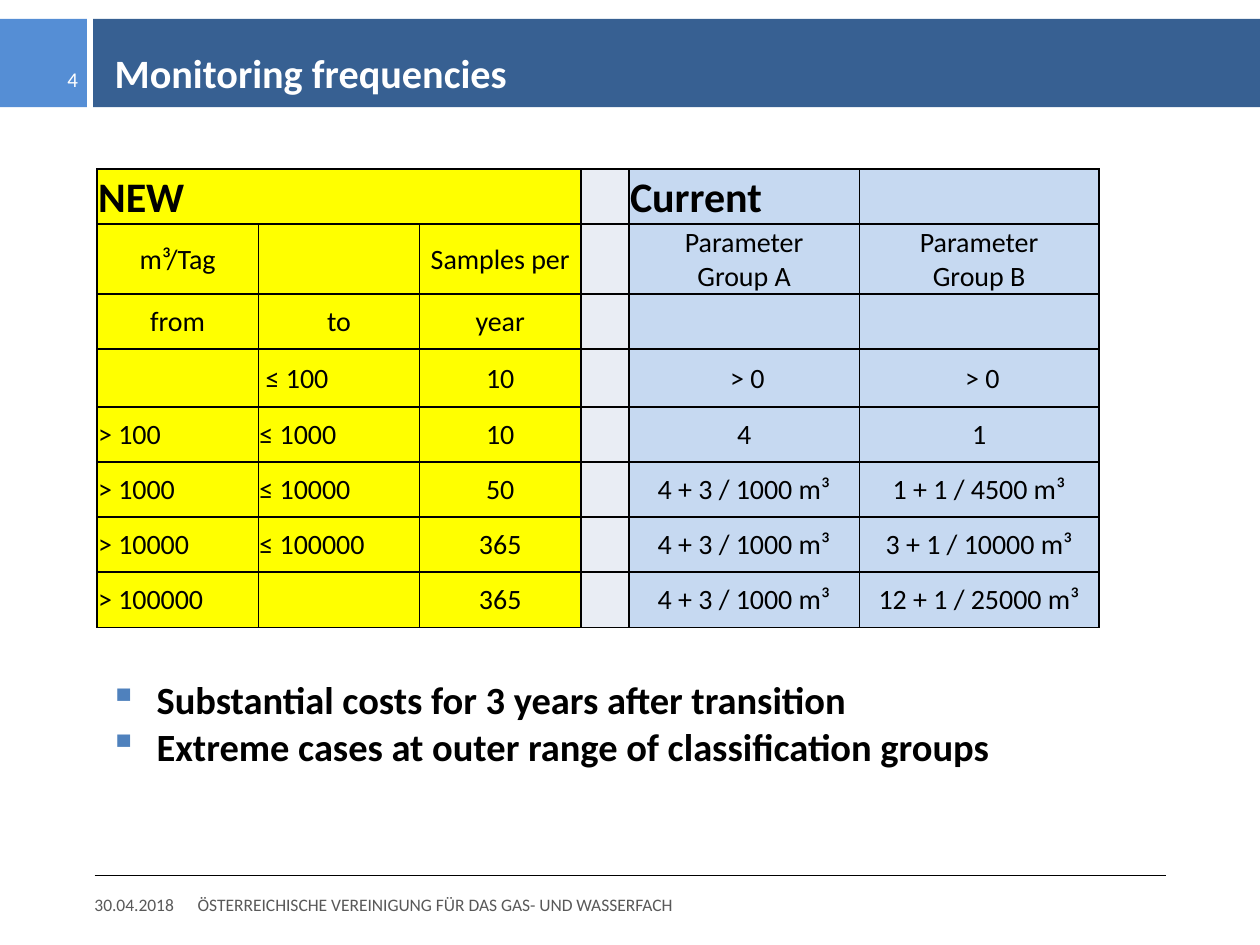
from lxml.etree import SubElement
from pptx import Presentation
from pptx.dml.color import RGBColor
from pptx.enum.shapes import MSO_CONNECTOR, MSO_SHAPE
from pptx.enum.text import MSO_ANCHOR as Anchor, PP_ALIGN as Align
from pptx.oxml.ns import qn
from pptx.util import Pt

COLORS = {
    "accent": "558ED5", "band": "376092", "white": "FFFFFF", "black": "000000",
    "footer": "595959", "bullet": "4F81BD",
    "new": "FFFF00", "gap": "E9EDF4", "current": "C6D9F1",
}
FORMATS = {
    "title": {"size": Pt(23), "bold": True},
    "footer": {"size": Pt(10), "bold": False},
    "number": {"size": Pt(12), "bold": False},
    "heading": {"size": Pt(24), "bold": True},
    "body": {"size": Pt(16), "bold": False},
    "message": {"size": Pt(22), "bold": True},
}
COLUMN_WIDTHS = [92.2, 92.2, 92.2, 27.4, 131.8, 136.8]
ROW_HEIGHTS = [31.5, 40, 31.5, 33, 31.5, 31.5, 31.5, 31.5]
COLUMN_FILLS = ["new"] * 3 + ["gap"] + ["current"] * 2
FREQUENCIES = [
    ["NEW", "", "", "", "Current", ""],
    ["m³/Tag", "", "Samples per", "", "Parameter\nGroup A", "Parameter\nGroup B"],
    ["from", "to", "year", "", "", ""],
    ["", " ≤ 100", "10", "", " > 0", " > 0"],
    ["> 100", "≤ 1000", "10", "", "4", "1"],
    ["> 1000", "≤ 10000", "50", "", "4 + 3 / 1000 m³", "1 + 1 / 4500 m³"],
    ["> 10000", "≤ 100000", "365", "", "4 + 3 / 1000 m³", "3 + 1 / 10000 m³"],
    ["> 100000", "", "365", "", "4 + 3 / 1000 m³", "12 + 1 / 25000 m³"],
]
MESSAGES = [
    "Substantial costs for 3 years after transition",
    "Extreme cases at outer range of classification groups",
]


def rgb(color):
    return RGBColor.from_string(COLORS[color])


def apply(target, values):
    for name, value in values.items():
        setattr(target, name, value)


def write(paragraph, text, style, color="black", align=Align.LEFT):
    paragraph.alignment = align
    run = paragraph.add_run()
    run.text = text
    apply(run.font, {"name": "Calibri", **FORMATS[style]})
    run.font.color.rgb = rgb(color)


def add_text_frame(slide, box, margins, anchor):
    frame = slide.shapes.add_textbox(*map(Pt, box)).text_frame
    sides = ("margin_left", "margin_top", "margin_right", "margin_bottom")
    apply(frame, dict(zip(sides, map(Pt, margins))))
    apply(frame, {"word_wrap": True, "vertical_anchor": anchor})
    return frame


def add_label(slide, box, text, style, color, align=Align.LEFT, margins=(0, 3, 0, 3)):
    frame = add_text_frame(slide, box, margins, Anchor.MIDDLE)
    write(frame.paragraphs[0], text, style, color, align)


def add_header(slide, box):
    left, top, width, height = box
    number_width, band_left = 49.7, 53.3
    for color, x, w in (("accent", left, number_width),
                        ("band", left + band_left, width - band_left)):
        block = slide.shapes.add_shape(MSO_SHAPE.RECTANGLE, Pt(x), Pt(top), Pt(w), Pt(height))
        block.shadow.inherit = False
        block.fill.solid()
        block.fill.fore_color.rgb = rgb(color)
        block.line.fill.background()
    add_label(slide, (left + 54, top + 10.8, width - 63, 39), "Monitoring frequencies",
              "title", "white", margins=(11.5, 3.6, 0, 3.6))
    add_label(slide, (left + 8, top + 20.2, 36.6, 28.8), "4", "number", "white", Align.RIGHT)


def add_borders(cell):
    properties = cell._tc.get_or_add_tcPr()
    for side in ("a:lnL", "a:lnR", "a:lnT", "a:lnB"):
        border = SubElement(properties, qn(side), w=str(Pt(1)))
        fill = SubElement(border, qn("a:solidFill"))
        SubElement(fill, qn("a:srgbClr"), val=COLORS["black"])


def add_frequency_table(slide, box):
    table = slide.shapes.add_table(len(ROW_HEIGHTS), len(COLUMN_WIDTHS), *map(Pt, box)).table
    for column, width in zip(table.columns, COLUMN_WIDTHS):
        column.width = Pt(width)
    for row, height in zip(table.rows, ROW_HEIGHTS):
        row.height = Pt(height)
    table.cell(0, 0).merge(table.cell(0, 2))
    for r, texts in enumerate(FREQUENCIES):
        for c, text in enumerate(texts):
            cell = table.cell(r, c)
            is_heading = r == 0
            is_range = r > 2 and c < 2
            at_bottom = is_heading or (r == 1 and c > 3)
            apply(cell, {
                "margin_left": Pt(0.7), "margin_right": Pt(0.7),
                "margin_top": Pt(0.7), "margin_bottom": 0,
                "vertical_anchor": Anchor.BOTTOM if at_bottom else Anchor.MIDDLE,
            })
            add_borders(cell)
            cell.fill.solid()
            cell.fill.fore_color.rgb = rgb(COLUMN_FILLS[c])
            if not text:
                continue
            align = Align.LEFT if is_heading or is_range else Align.CENTER
            for i, line in enumerate(text.split("\n")):
                frame = cell.text_frame
                paragraph = frame.add_paragraph() if i else frame.paragraphs[0]
                write(paragraph, line, "heading" if is_heading else "body", align=align)


def add_bullet(paragraph):
    properties = paragraph._p.get_or_add_pPr()
    properties.set("marL", str(Pt(27)))
    properties.set("indent", str(Pt(-27)))
    color = SubElement(properties, qn("a:buClr"))
    SubElement(color, qn("a:srgbClr"), val=COLORS["bullet"])
    SubElement(properties, qn("a:buChar"), char="▪")


def add_messages(slide, box):
    frame = add_text_frame(slide, box, (7.2, 3.6, 7.2, 3.6), Anchor.TOP)
    for i, message in enumerate(MESSAGES):
        paragraph = frame.add_paragraph() if i else frame.paragraphs[0]
        add_bullet(paragraph)
        write(paragraph, message, "message")


def add_footer(slide, box):
    left, top, width, height = box
    rule = slide.shapes.add_connector(MSO_CONNECTOR.STRAIGHT, Pt(left), Pt(top),
                                      Pt(left + width), Pt(top))
    rule.line.color.rgb = rgb("black")
    rule.line.width = Pt(0.75)
    SubElement(rule._element.spPr, qn("a:effectLst"))
    text_top, text_height = top + 8, height - 8
    add_label(slide, (left, text_top, 56, text_height), "30.04.2018", "footer", "footer")
    add_label(slide, (left + 59, text_top, 368, text_height),
              "ÖSTERREICHISCHE VEREINIGUNG FÜR DAS GAS- UND WASSERFACH", "footer", "footer")


def main():
    presentation = Presentation()
    apply(presentation, {"slide_width": Pt(720), "slide_height": Pt(540)})
    slide = presentation.slides.add_slide(presentation.slide_layouts[6])
    add_header(slide, (0, 10.8, 720, 50.4))
    add_frequency_table(slide, (55.4, 96.5, sum(COLUMN_WIDTHS), sum(ROW_HEIGHTS)))
    add_messages(slide, (55.4, 383, 610.6, 60.5))
    add_footer(slide, (54, 500.4, 612, 25.2))
    presentation.save("out.pptx")


if __name__ == "__main__":
    main()
